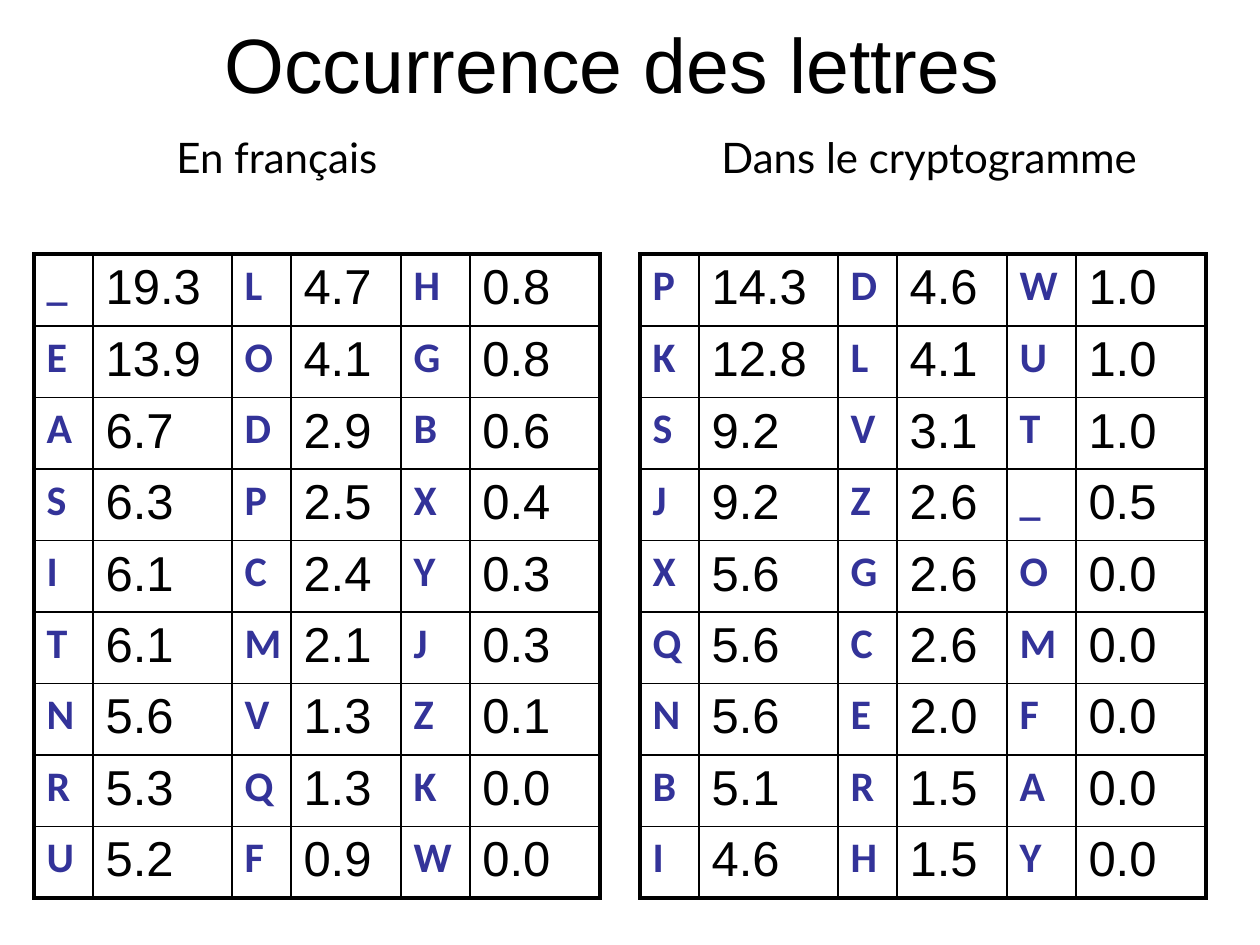
from lxml.etree import SubElement
from pptx import Presentation
from pptx.dml.color import RGBColor
from pptx.enum.text import MSO_ANCHOR, MSO_AUTO_SIZE, PP_ALIGN
from pptx.oxml.ns import qn
from pptx.util import Emu, Pt

BLACK = "000000"
INDIGO = "333399"
COLUMN_WIDTHS = [59, 139, 59, 110, 69, 130]
ROW_HEIGHTS = [72] + [67] * 8

FRENCH = """
_ 19.3 L 4.7 H 0.8
E 13.9 O 4.1 G 0.8
A 6.7 D 2.9 B 0.6
S 6.3 P 2.5 X 0.4
I 6.1 C 2.4 Y 0.3
T 6.1 M 2.1 J 0.3
N 5.6 V 1.3 Z 0.1
R 5.3 Q 1.3 K 0.0
U 5.2 F 0.9 W 0.0
"""

CRYPTOGRAM = """
P 14.3 D 4.6 W 1.0
K 12.8 L 4.1 U 1.0
S 9.2 V 3.1 T 1.0
J 9.2 Z 2.6 _ 0.5
X 5.6 G 2.6 O 0.0
Q 5.6 C 2.6 M 0.0
N 5.6 E 2.0 F 0.0
B 5.1 R 1.5 A 0.0
I 4.6 H 1.5 Y 0.0
"""


def px(length):
    return Emu(round(length * 914400 / 126))


def color(value):
    return RGBColor.from_string(value)


class Page:
    thin, thick = 1, 2.25

    def __init__(self, deck):
        self.slide = deck.slides.add_slide(deck.slide_layouts[6])

    def style(self, frame, size, font, fill=BLACK, bold=False):
        for span in frame.paragraphs[0].runs:
            span.font.size = Pt(size)
            span.font.name = font
            span.font.bold = bold
            span.font.color.rgb = color(fill)

    def text(self, text, place, size, font):
        box = self.slide.shapes.add_textbox(*map(px, place))
        box.text_frame.text = text
        self.style(box.text_frame, size, font)
        return box.text_frame

    def title(self, text, place):
        frame = self.text(text, place, 44, "Arial")
        frame.word_wrap = True
        frame.vertical_anchor = MSO_ANCHOR.MIDDLE
        frame.paragraphs[0].alignment = PP_ALIGN.CENTER

    def caption(self, text, place):
        frame = self.text(text, place, 24, "Lato")
        frame.word_wrap = False
        frame.auto_size = MSO_AUTO_SIZE.SHAPE_TO_FIT_TEXT

    def border(self, cell, side, width):
        line = SubElement(cell._tc.get_or_add_tcPr(), qn(f"a:ln{side}"), w=str(Pt(width)))
        fill = SubElement(line, qn("a:solidFill"))
        SubElement(fill, qn("a:srgbClr"), val=BLACK)

    def frequencies(self, data, left, top):
        rows = [line.split() for line in data.strip().splitlines()]
        last_row, last_column = len(rows) - 1, len(COLUMN_WIDTHS) - 1
        table = self.slide.shapes.add_table(
            len(rows), len(COLUMN_WIDTHS), px(left), px(top),
            px(sum(COLUMN_WIDTHS)), px(sum(ROW_HEIGHTS))).table
        table.first_row = table.horz_banding = False
        for column, width in zip(table.columns, COLUMN_WIDTHS):
            column.width = px(width)
        for row, height in zip(table.rows, ROW_HEIGHTS):
            row.height = px(height)
        for r, values in enumerate(rows):
            for c, value in enumerate(values):
                cell = table.cell(r, c)
                cell.text_frame.text = value
                if c % 2 == 0:
                    self.style(cell.text_frame, 24, "Calibri", INDIGO, True)
                else:
                    self.style(cell.text_frame, 28, "Arial")
                outer = {"L": c == 0, "R": c == last_column, "T": r == 0, "B": r == last_row}
                for side, is_outer in outer.items():
                    self.border(cell, side, self.thick if is_outer else self.thin)
                cell.fill.background()


def main():
    deck = Presentation()
    deck.slide_width, deck.slide_height = px(1260), px(945)
    page = Page(deck)
    page.title("Occurrence des lettres ", (25, 0, 1196, 125))
    page.frequencies(FRENCH, 34, 254)
    page.frequencies(CRYPTOGRAM, 640, 254)
    page.caption("En français", (164, 125, 229, 63))
    page.caption("Dans le cryptogramme", (709, 125, 445, 63))
    deck.save("out.pptx")


if __name__ == "__main__":
    main()
